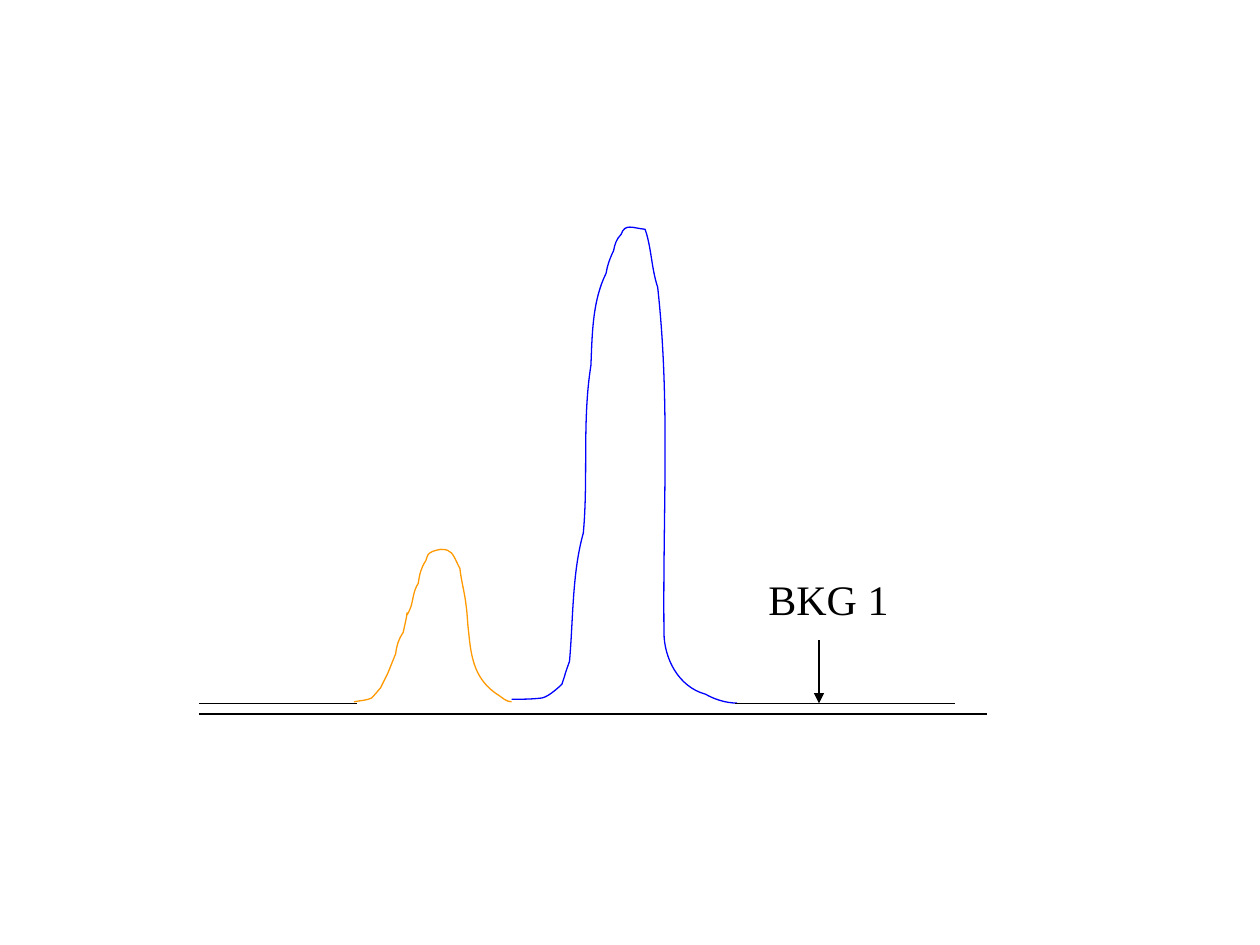
from dataclasses import dataclass

from lxml import etree
from pptx import Presentation
from pptx.dml.color import RGBColor
from pptx.enum.shapes import MSO_CONNECTOR
from pptx.enum.text import MSO_AUTO_SIZE
from pptx.oxml.ns import qn
from pptx.util import Inches, Pt

STRAIGHT = MSO_CONNECTOR.STRAIGHT
FIT_SHAPE = MSO_AUTO_SIZE.SHAPE_TO_FIT_TEXT
BLANK_LAYOUT = 6
GRID = 1 / 12  # the straight lines lie on a grid of twelfths of an inch

Point = tuple[float, float]


@dataclass(frozen=True)
class Theme:
    ink: RGBColor = RGBColor(0x00, 0x00, 0x00)
    small_peak: RGBColor = RGBColor(0xFF, 0x99, 0x00)
    large_peak: RGBColor = RGBColor(0x00, 0x00, 0xFF)
    font: str = "Times New Roman"
    label_size: Pt = Pt(24)
    line_width: Pt = Pt(0.75)


@dataclass(frozen=True)
class Line:
    """A straight line, in grid steps."""
    start: Point
    end: Point
    arrow: bool = False


@dataclass(frozen=True)
class Peak:
    """A chain of cubic curves, in inches."""
    start: Point
    curves: tuple[tuple[float, ...], ...]  # two control points and an end point
    color: RGBColor


THEME = Theme()

AXIS = Line((19, 68), (94, 68))
LEFT_BACKGROUND = Line((19, 67), (34, 67))
RIGHT_BACKGROUND = Line((70, 67), (91, 67))
MARKER = Line((78, 61), (78, 67), arrow=True)

SMALL_PEAK = Peak((2.81, 5.57), (
    (2.86, 5.56, 2.91, 5.56, 2.95, 5.54),
    (2.97, 5.52, 3.02, 5.46, 3.02, 5.46),
    (3.04, 5.42, 3.06, 5.38, 3.08, 5.34),
    (3.10, 5.29, 3.14, 5.19, 3.14, 5.19),
    (3.15, 5.12, 3.16, 5.08, 3.20, 5.02),
    (3.27, 4.71, 3.19, 4.99, 3.26, 4.82),
    (3.28, 4.76, 3.28, 4.69, 3.32, 4.63),
    (3.33, 4.56, 3.34, 4.51, 3.38, 4.45),
    (3.39, 4.43, 3.39, 4.40, 3.41, 4.39),
    (3.43, 4.37, 3.50, 4.36, 3.50, 4.36),
    (3.52, 4.36, 3.55, 4.36, 3.57, 4.38),
    (3.60, 4.39, 3.63, 4.48, 3.65, 4.51),
    (3.66, 4.61, 3.69, 4.71, 3.70, 4.81),
    (3.71, 4.88, 3.71, 4.95, 3.72, 5.02),
    (3.74, 5.23, 3.77, 5.40, 3.96, 5.52),
    (3.99, 5.54, 4.02, 5.57, 4.06, 5.57),
), THEME.small_peak)

LARGE_PEAK = Peak((4.06, 5.55), (
    (4.14, 5.55, 4.22, 5.55, 4.30, 5.54),
    (4.36, 5.53, 4.46, 5.43, 4.46, 5.43),
    (4.47, 5.41, 4.47, 5.39, 4.48, 5.37),
    (4.49, 5.33, 4.52, 5.25, 4.52, 5.25),
    (4.55, 4.92, 4.54, 4.55, 4.63, 4.23),
    (4.67, 3.79, 4.62, 3.34, 4.69, 2.90),
    (4.70, 2.67, 4.70, 2.39, 4.81, 2.17),
    (4.82, 2.11, 4.84, 2.05, 4.87, 1.99),
    (4.88, 1.94, 4.89, 1.90, 4.93, 1.86),
    (4.96, 1.77, 5.02, 1.81, 5.12, 1.82),
    (5.17, 1.96, 5.17, 2.13, 5.22, 2.28),
    (5.32, 3.19, 5.26, 4.04, 5.27, 5.02),
    (5.27, 5.22, 5.38, 5.45, 5.60, 5.51),
    (5.67, 5.55, 5.76, 5.58, 5.85, 5.58),
), THEME.large_peak)


def add_line(slide, line: Line) -> None:
    connector = slide.shapes.add_connector(
        STRAIGHT, *(Inches(value * GRID) for value in line.start + line.end))
    connector.line.color.rgb = THEME.ink
    connector.line.width = THEME.line_width
    if line.arrow:
        outline = connector.line._get_or_add_ln()
        etree.SubElement(outline, qn("a:tailEnd"), type="triangle")
    etree.SubElement(connector._element.spPr, qn("a:effectLst"))


def bend_segments(shape) -> None:
    """Turn every three line segments into one cubic curve."""
    segments = list(shape._element.iter(qn("a:lnTo")))
    for index in range(0, len(segments), 3):
        curve = etree.Element(qn("a:cubicBezTo"))
        segments[index].addprevious(curve)
        for segment in segments[index:index + 3]:
            curve.append(segment[0])
            segment.getparent().remove(segment)


def add_peak(slide, peak: Peak) -> None:
    points = [(Inches(curve[i]), Inches(curve[i + 1]))
              for curve in peak.curves for i in (0, 2, 4)]
    builder = slide.shapes.build_freeform(*(Inches(value) for value in peak.start))
    builder.add_line_segments(points, close=False)
    shape = builder.convert_to_shape()
    bend_segments(shape)
    shape.shadow.inherit = False
    shape.fill.background()
    shape.line.color.rgb = peak.color
    shape.line.width = THEME.line_width


def add_label(slide, text: str, left: float, top: float, width: float, height: float) -> None:
    box = slide.shapes.add_textbox(Inches(left), Inches(top), Inches(width), Inches(height))
    box.text_frame.word_wrap = False
    box.text_frame.auto_size = FIT_SHAPE
    run = box.text_frame.paragraphs[0].add_run()
    run.text = text
    run.font.name = THEME.font
    run.font.size = THEME.label_size
    run.font.color.rgb = THEME.ink


def main() -> None:
    presentation = Presentation()
    presentation.slide_width = Inches(10)
    presentation.slide_height = Inches(7.5)
    slide = presentation.slides.add_slide(presentation.slide_layouts[BLANK_LAYOUT])

    # Axis and background level on the left
    add_line(slide, AXIS)
    add_line(slide, LEFT_BACKGROUND)

    # Peaks
    for peak in (SMALL_PEAK, LARGE_PEAK):
        add_peak(slide, peak)

    # Background level on the right, with its marker and label
    add_line(slide, RIGHT_BACKGROUND)
    add_line(slide, MARKER)
    add_label(slide, "BKG 1", 6, 4.5, 1.16, 0.5)

    presentation.save("out.pptx")


if __name__ == "__main__":
    main()
